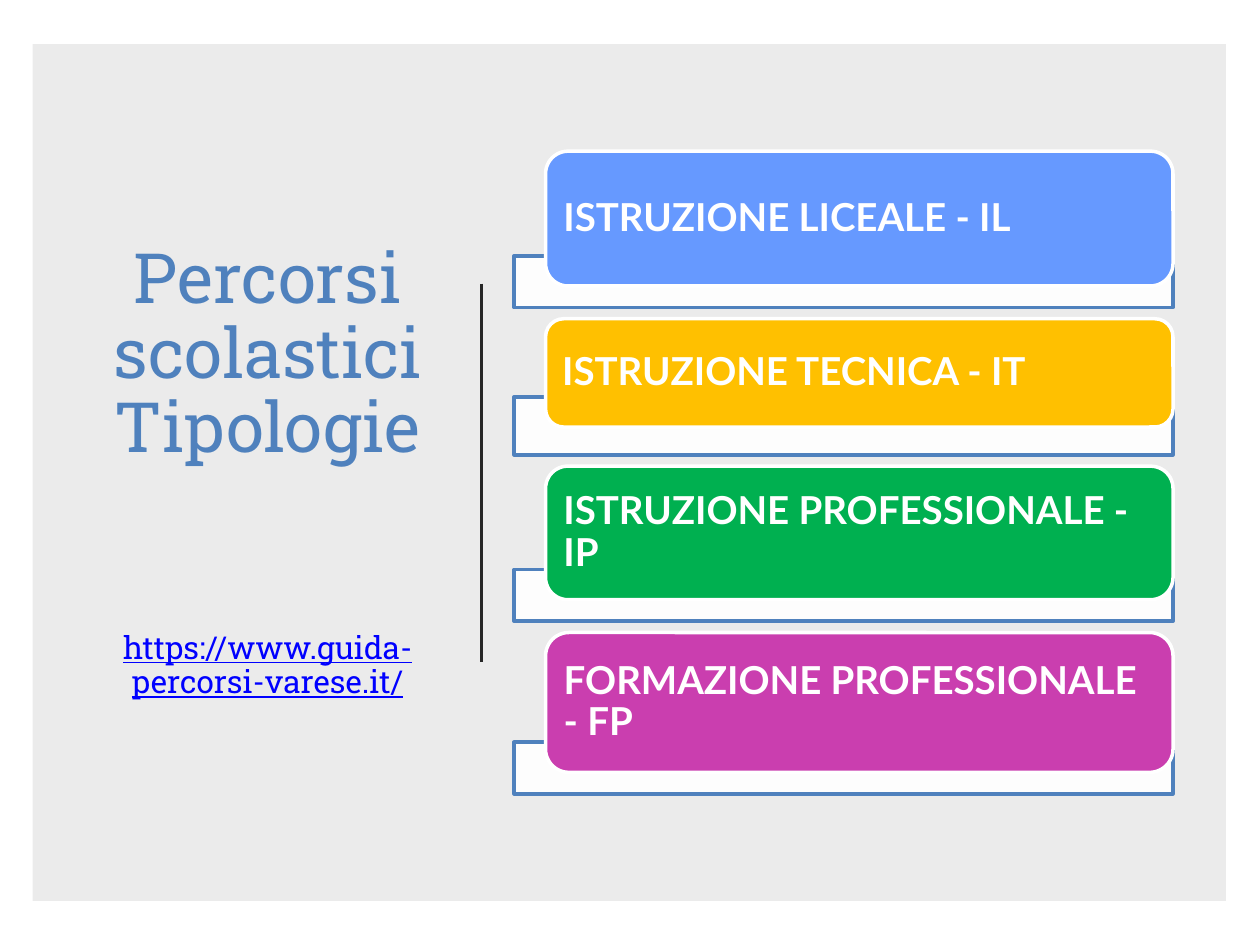
from dataclasses import dataclass

import lxml.etree
import pptx
import pptx.dml.color
import pptx.enum.shapes
import pptx.enum.text
import pptx.oxml.ns
from pptx.util import Inches, Pt

SHAPE = pptx.enum.shapes.MSO_SHAPE
ALIGN = pptx.enum.text.PP_ALIGN
ANCHOR = pptx.enum.text.MSO_ANCHOR
qn = pptx.oxml.ns.qn

BLUE = "4F81BD"
WHITE = "FFFFFF"
RIGHT_EDGE = 9.31
CARD_LEFT = 4.33
FRAME_LEFT = 4.08
FRAME_OVERLAP = 0.24  # part of each frame hidden behind its card
STACK_TOP = 1.2
STACK_GAP = 0.09


@dataclass
class Pathway:
    label: str
    color: str
    card_height: float
    frame_height: float = 0.41


PATHWAYS = [
    Pathway("ISTRUZIONE LICEALE - IL", "6699FF", 1.07),
    Pathway("ISTRUZIONE TECNICA - IT", "FFC000", 0.86, 0.46),
    Pathway("ISTRUZIONE PROFESSIONALE - IP", "00B050", 1.06),
    Pathway("FORMAZIONE PROFESSIONALE - FP", "CA3EAF", 1.11),
]


def rgb(color: str) -> pptx.dml.color.RGBColor:
    return pptx.dml.color.RGBColor.from_string(color)


def add_box(slide, kind, left: float, top: float, width: float, height: float,
            fill: str, line: str = "", opacity: int = 100):
    shape = slide.shapes.add_shape(
        kind, Inches(left), Inches(top), Inches(width), Inches(height))
    shape.shadow.inherit = False
    shape.fill.solid()
    shape.fill.fore_color.rgb = rgb(fill)
    if opacity < 100:
        color_element = shape.element.spPr.find(".//" + qn("a:srgbClr"))
        alpha = lxml.etree.SubElement(color_element, qn("a:alpha"))
        alpha.set("val", str(opacity * 1000))
    if line:
        shape.line.color.rgb = rgb(line)
        shape.line.width = Pt(2)
    else:
        shape.line.fill.background()
    return shape


def format_paragraph(paragraph, font_name: str, size: float, color: str, alignment) -> None:
    paragraph.alignment = alignment
    paragraph.line_spacing = 0.9
    paragraph.font.name = font_name
    paragraph.font.size = Pt(size)
    paragraph.font.color.rgb = rgb(color)


def add_title(slide):
    title = slide.shapes.title
    title.left, title.top = Inches(0.69), Inches(1.05)
    title.width, title.height = Inches(2.87), Inches(5.39)
    frame = title.text_frame
    frame.word_wrap = True
    frame.auto_size = pptx.enum.text.MSO_AUTO_SIZE.NONE
    frame.vertical_anchor = ANCHOR.MIDDLE

    heading = frame.paragraphs[0]
    heading.text = "Percorsi scolastici\vTipologie"
    format_paragraph(heading, "Roboto Slab", 39.6, BLUE, ALIGN.CENTER)

    address = frame.add_paragraph()
    address.text = "https://www.guida-percorsi-varese.it/"
    format_paragraph(address, "Roboto Slab", 18, "0000FF", ALIGN.CENTER)
    address.font.underline = True
    address.space_before = Pt(94)
    return title


def add_divider(slide) -> None:
    divider = slide.shapes.add_connector(
        pptx.enum.shapes.MSO_CONNECTOR.STRAIGHT,
        Inches(3.82), Inches(2.25), Inches(3.82), Inches(5.25))
    divider.line.color.rgb = rgb("262626")
    divider.line.width = Pt(1.5)
    lxml.etree.SubElement(divider.element.spPr, qn("a:effectLst"))


def add_pathway(slide, pathway: Pathway, top: float) -> float:
    """Draw a frame and its card; return the bottom of the frame."""
    frame_top = top + pathway.card_height - FRAME_OVERLAP
    add_box(slide, SHAPE.RECTANGLE, FRAME_LEFT, frame_top, RIGHT_EDGE - FRAME_LEFT,
            pathway.frame_height, WHITE, BLUE, opacity=90)
    card = add_box(slide, SHAPE.ROUNDED_RECTANGLE, CARD_LEFT, top,
                   RIGHT_EDGE - CARD_LEFT, pathway.card_height, pathway.color, WHITE)
    text_frame = card.text_frame
    text_frame.word_wrap = True
    text_frame.vertical_anchor = ANCHOR.MIDDLE
    text_frame.margin_left = text_frame.margin_right = Inches(0.09)
    text_frame.margin_top = text_frame.margin_bottom = 0
    paragraph = text_frame.paragraphs[0]
    paragraph.text = pathway.label
    format_paragraph(paragraph, "Lato", 22, WHITE, ALIGN.LEFT)
    paragraph.font.bold = True
    return frame_top + pathway.frame_height


def main() -> None:
    presentation = pptx.Presentation()
    presentation.slide_width, presentation.slide_height = Inches(10), Inches(7.5)
    slide = presentation.slides.add_slide(presentation.slide_layouts[5])

    # Backdrop, placed behind the title
    title = add_title(slide)
    backdrop = add_box(slide, SHAPE.RECTANGLE, 0.26, 0.35, 9.47, 6.8, "000000", opacity=8)
    title.element.addprevious(backdrop.element)

    add_divider(slide)

    # Stack of school pathways
    top = STACK_TOP
    for pathway in PATHWAYS:
        top = add_pathway(slide, pathway, top) + STACK_GAP

    presentation.save("out.pptx")


if __name__ == "__main__":
    main()
